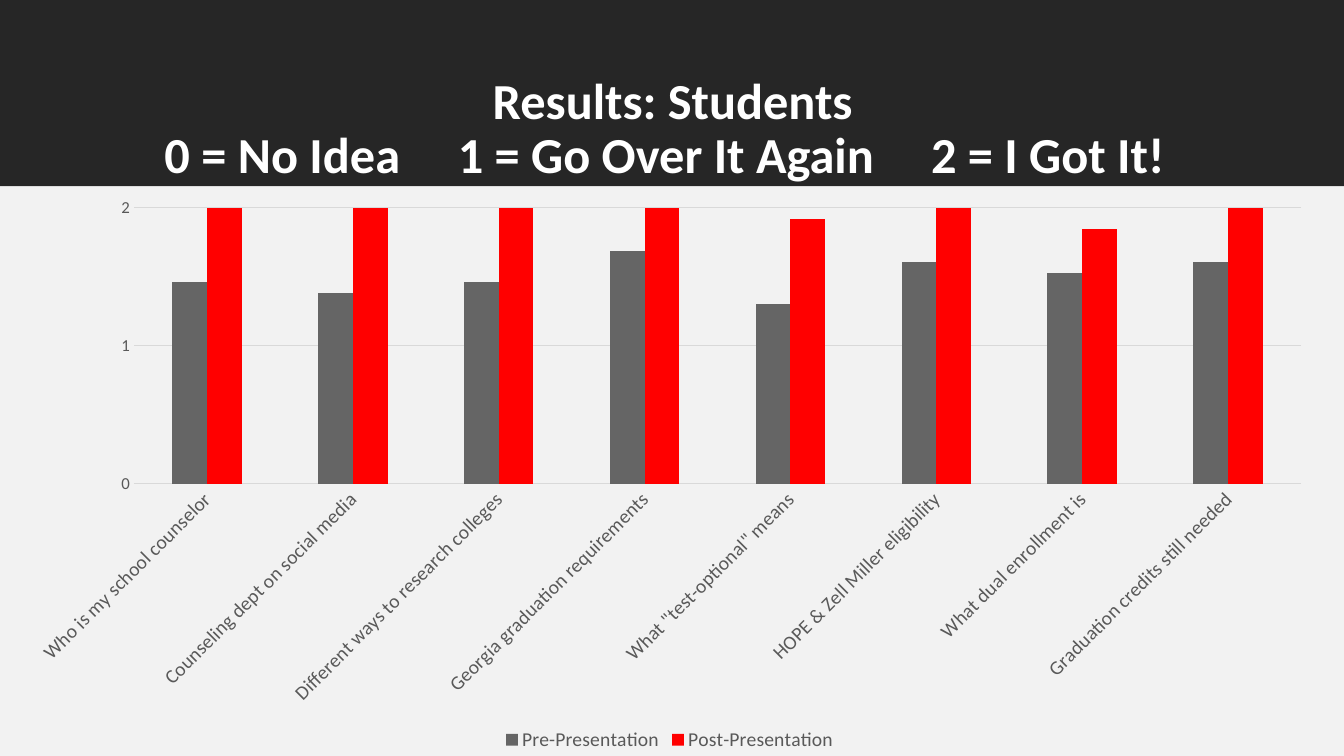
from dataclasses import dataclass

from lxml import etree
from pptx import Presentation
from pptx import util as u
from pptx.chart.data import CategoryChartData
from pptx.dml.color import RGBColor
from pptx.enum import chart as ch, shapes, text
from pptx.oxml.ns import qn

Pt = u.Pt
WIDTH, HEIGHT, BAND = 960, 540, 133.2


@dataclass(frozen=True)
class Theme:
    font: str = "Calibri"
    band: str = "262626"
    panel: str = "F2F2F2"
    title: str = "FFFFFF"
    label: str = "595959"
    grid: str = "D9D9D9"
    before: str = "656565"
    after: str = "FF0000"
    title_size: int = 36
    label_size: int = 14
    scale_size: int = 12


def apply(obj, **values):
    for name, value in values.items():
        setattr(obj, name, value)


class Deck:
    def __init__(self, prs, theme):
        self.theme = theme
        self.s = prs.slides.add_slide(prs.slide_layouts[5])

    def font(self, f, size, color, bold=False):
        apply(f, name=self.theme.font, size=Pt(size), bold=bold)
        f.color.rgb = RGBColor.from_string(color)

    def rect(self, x, y, w, h, color):
        sp = self.s.shapes.add_shape(shapes.MSO_SHAPE.RECTANGLE, Pt(x), Pt(y), Pt(w), Pt(h))
        sp.shadow.inherit = False
        sp.fill.solid()
        sp.fill.fore_color.rgb = RGBColor.from_string(color)
        sp.line.fill.background()

    def title(self, x, y, w, h, heading, key, tabs, inset):
        sp = self.s.shapes.title
        apply(sp, left=Pt(x), top=Pt(y), width=Pt(w), height=Pt(h))
        sp.element.getparent().append(sp.element)  # in front of the band
        tf = sp.text_frame
        apply(tf, word_wrap=True, auto_size=text.MSO_AUTO_SIZE.NONE,
              vertical_anchor=text.MSO_ANCHOR.TOP, margin_left=Pt(inset),
              margin_right=Pt(inset), margin_top=Pt(3.6), margin_bottom=Pt(3.6))
        lines = ((heading, text.PP_ALIGN.CENTER), ("\t".join(key), text.PP_ALIGN.LEFT))
        for i, (line, align) in enumerate(lines):
            p = tf.add_paragraph() if i else tf.paragraphs[0]
            apply(p, alignment=align, line_spacing=0.9, space_before=Pt(0))
            r = p.add_run()
            r.text = line
            self.font(r.font, self.theme.title_size, self.theme.title, True)
        # Tab stops space out the answer key
        tab_list = etree.SubElement(p._p.get_or_add_pPr(), qn("a:tabLst"))
        for pos in tabs:
            etree.SubElement(tab_list, qn("a:tab"), pos=str(int(Pt(pos))), algn="l")

    def line(self, fmt):
        fmt.line.color.rgb = RGBColor.from_string(self.theme.grid)
        fmt.line.width = Pt(0.75)

    def columns(self, x, y, w, h, topics, series):
        t = self.theme
        data = CategoryChartData(number_format="General")
        data.categories = topics
        for name, values, _ in series:
            data.add_series(name, values)
        chart = self.s.shapes.add_chart(ch.XL_CHART_TYPE.COLUMN_CLUSTERED,
                                        Pt(x), Pt(y), Pt(w), Pt(h), data).chart
        apply(chart, has_title=False, has_legend=True)
        self.font(chart.font, 10, "000000")

        # Columns
        plot = chart.plots[0]
        apply(plot, gap_width=219, overlap=0, vary_by_categories=False)
        for bars, (_, _, color) in zip(plot.series, series):
            bars.format.fill.solid()
            bars.format.fill.fore_color.rgb = RGBColor.from_string(color)

        # Axes
        cat, val = chart.category_axis, chart.value_axis
        for axis, size in ((cat, t.label_size), (val, t.scale_size)):
            apply(axis, major_tick_mark=ch.XL_TICK_MARK.NONE,
                  minor_tick_mark=ch.XL_TICK_MARK.NONE)
            self.font(axis.tick_labels.font, size, t.label)
        self.line(cat.format)
        cat.tick_labels.font  # text properties exist before the labels are turned
        body = cat._element.find(qn("c:txPr")).find(qn("a:bodyPr"))
        body.set("rot", "-2700000")
        body.set("vert", "horz")
        apply(val, minimum_scale=0, maximum_scale=2, major_unit=1, has_major_gridlines=True)
        val.format.line.fill.background()
        self.line(val.major_gridlines.format)

        # Legend
        apply(chart.legend, position=ch.XL_LEGEND_POSITION.BOTTOM, include_in_layout=False)
        self.font(chart.legend.font, t.label_size, t.label)


def main():
    prs = Presentation()
    apply(prs, slide_width=Pt(WIDTH), slide_height=Pt(HEIGHT))
    theme = Theme()
    deck = Deck(prs, theme)

    # Header
    deck.rect(0, 0, WIDTH, BAND, theme.band)
    deck.title(91.5, 50.4, 778.3, 70.6, "Results: Students",
               ("0 = No Idea", "1 = Go Over It Again", "2 = I Got It!"),
               tabs=(209.5, 547.5), inset=26)

    # Survey results
    deck.rect(0, BAND, WIDTH, 410.4, theme.panel)
    topics = ("Who is my school counselor", "Counseling dept on social media",
              "Different ways to research colleges", "Georgia graduation requirements",
              'What "test-optional" means', "HOPE & Zell Miller eligibility",
              "What dual enrollment is", "Graduation credits still needed")
    series = (
        ("Pre-Presentation", (1.46, 1.38, 1.46, 1.69, 1.3, 1.61, 1.53, 1.61), theme.before),
        ("Post-Presentation", (2, 2, 2, 2, 1.92, 2, 1.85, 2), theme.after),
    )
    deck.columns(8.6, BAND, 939.6, HEIGHT - BAND, topics, series)
    prs.save("out.pptx")


if __name__ == "__main__":
    main()
